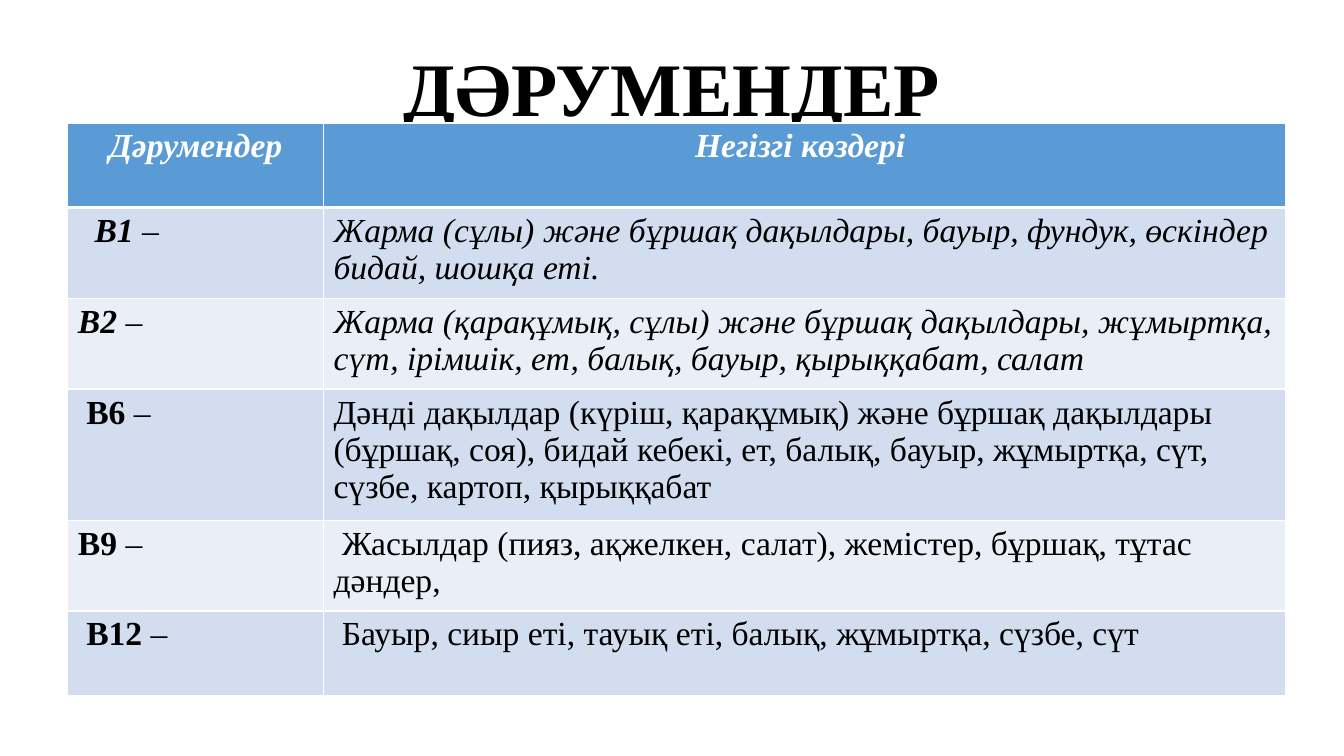
from lxml import etree
from pptx import Presentation
from pptx.dml.color import RGBColor
from pptx.enum.text import MSO_ANCHOR, PP_ALIGN
from pptx.oxml.ns import qn
from pptx.util import Cm, Pt

CENTER = PP_ALIGN.CENTER
LEFT = PP_ALIGN.LEFT
BOTTOM = MSO_ANCHOR.BOTTOM

FONT = "Times New Roman"
BLACK = RGBColor(0x00, 0x00, 0x00)
WHITE = RGBColor(0xFF, 0xFF, 0xFF)
HEADER_BLUE = RGBColor(0x5B, 0x9B, 0xD5)
BANDS = (RGBColor(0xD2, 0xDE, 0xEF), RGBColor(0xEA, 0xEF, 0xF7))

SPACE_WIDTH = 0.21  # cm, one space at 24 pt
COLUMN_SHARES = (0.21, 0.79)
ROW_HEIGHTS = (2.13, 2.13, 2.13, 3.07, 2.13, 2.13)

HEADERS = ("Дәрумендер", "Негізгі көздері ")
# vitamin, its indent in spaces, sources, their indent in spaces, italic
VITAMINS = (
    ("B1", 2, ("Жарма (сұлы) және бұршақ дақылдары, бауыр, фундук, өскіндер",
               "бидай, шошқа еті."), 0, True),
    ("B2", 0, ("Жарма (қарақұмық, сұлы) және бұршақ дақылдары, жұмыртқа, "
               "сүт, ірімшік, ет, балық, бауыр, қырыққабат, салат",), 0, True),
    ("B6", 1, ("Дәнді дақылдар (күріш, қарақұмық) және бұршақ дақылдары "
               "(бұршақ, соя), бидай кебекі, ет, балық, бауыр, жұмыртқа, "
               "сүт, сүзбе, картоп, қырыққабат",), 0, False),
    ("B9", 0, ("Жасылдар (пияз, ақжелкен, салат), жемістер, бұршақ, тұтас "
               "дәндер,",), 1, False),
    ("В12", 1, ("Бауыр, сиыр еті, тауық еті, балық, жұмыртқа, сүзбе, сүт",),
     1, False),
)


def add_run(paragraph, text, size=24, color=BLACK, bold=False, italic=False):
    run = paragraph.add_run()
    run.text = text
    run.font.name = FONT
    run.font.size = Pt(size)
    run.font.color.rgb = color
    run.font.bold = bold
    run.font.italic = italic


def indent_first_line(paragraph, spaces):
    paragraph.alignment = LEFT
    if spaces:
        properties = paragraph._p.get_or_add_pPr()
        properties.set("indent", str(Cm(spaces * SPACE_WIDTH)))


def style_cell(cell, fill, top=1, bottom=1):
    """Give the cell white borders, widths in points, and a solid fill."""
    properties = cell._tc.get_or_add_tcPr()
    for side, width in (("L", 1), ("R", 1), ("T", top), ("B", bottom)):
        border = etree.SubElement(properties, qn(f"a:ln{side}"), w=str(Pt(width)))
        solid = etree.SubElement(border, qn("a:solidFill"))
        etree.SubElement(solid, qn("a:srgbClr"), val=str(WHITE))
    cell.fill.solid()
    cell.fill.fore_color.rgb = fill


def add_title(slide, left, top, width, height):
    frame = slide.shapes.add_textbox(left, top, width, height).text_frame
    frame.word_wrap = True
    frame.vertical_anchor = BOTTOM
    title = frame.paragraphs[0]
    title.alignment = CENTER
    title.line_spacing = 0.9
    add_run(title, "ДӘРУМЕНДЕР", size=54, bold=True)


def add_vitamin_table(slide, left, top, width):
    table = slide.shapes.add_table(
        len(ROW_HEIGHTS), len(COLUMN_SHARES), left, top, width,
        Cm(sum(ROW_HEIGHTS))).table
    for column, share in zip(table.columns, COLUMN_SHARES):
        column.width = int(width * share)
    for row, height in zip(table.rows, ROW_HEIGHTS):
        row.height = Cm(height)

    for index, header in enumerate(HEADERS):
        cell = table.cell(0, index)
        style_cell(cell, HEADER_BLUE, bottom=3)
        paragraph = cell.text_frame.paragraphs[0]
        paragraph.alignment = CENTER
        add_run(paragraph, header, color=WHITE, bold=True, italic=True)

    for index, vitamin in enumerate(VITAMINS):
        name, name_indent, sources, source_indent, italic = vitamin
        name_cell, source_cell = table.rows[index + 1].cells
        for cell in (name_cell, source_cell):
            style_cell(cell, BANDS[index % 2], top=1 if index else 3)

        label = name_cell.text_frame.paragraphs[0]
        indent_first_line(label, name_indent)
        add_run(label, name, bold=True, italic=italic)
        add_run(label, " –", italic=italic)

        frame = source_cell.text_frame
        for number, source in enumerate(sources):
            paragraph = frame.add_paragraph() if number else frame.paragraphs[0]
            indent_first_line(paragraph, source_indent)
            add_run(paragraph, source, italic=italic)


def main():
    presentation = Presentation()
    presentation.slide_width = Cm(33.87)
    presentation.slide_height = Cm(19.05)
    slide = presentation.slides.add_slide(presentation.slide_layouts[6])
    add_title(slide, Cm(4.23), Cm(1.32), Cm(25.4), Cm(2.16))
    add_vitamin_table(slide, Cm(1.71), Cm(3.1), Cm(30.68))
    presentation.save("out.pptx")


if __name__ == "__main__":
    main()
